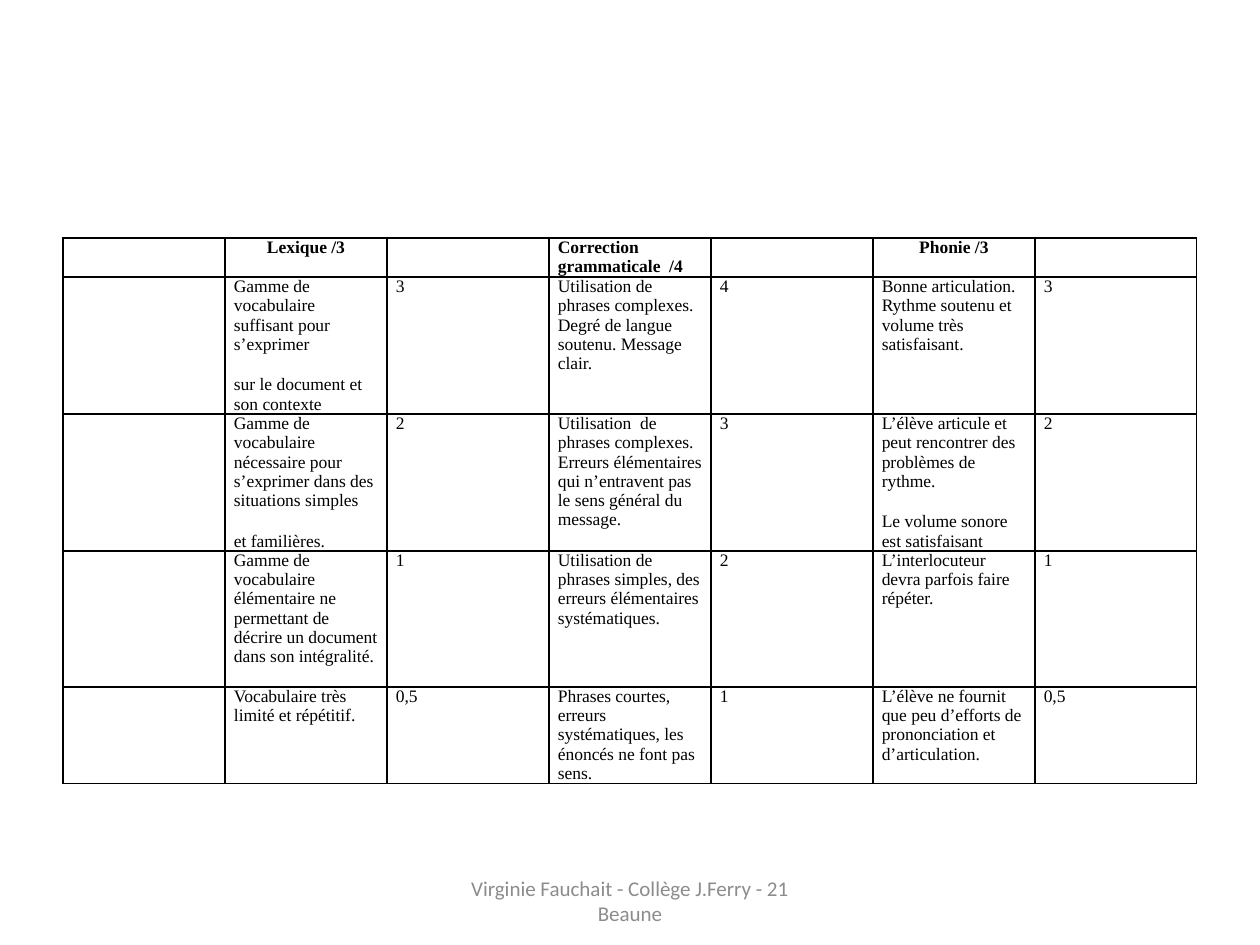
import pptx
import pptx.dml.color
import pptx.enum.text
import pptx.oxml
import pptx.oxml.ns
import pptx.util

BLACK = pptx.dml.color.RGBColor(0x00, 0x00, 0x00)
WHITE = pptx.dml.color.RGBColor(0xFF, 0xFF, 0xFF)
GREY = pptx.dml.color.RGBColor(0x8C, 0x8C, 0x8C)

PX_PER_INCH = 126
CENTER = pptx.enum.text.PP_ALIGN.CENTER
MIDDLE = pptx.enum.text.MSO_ANCHOR.MIDDLE

ROW_HEIGHTS = [39, 137, 136, 136, 96]
CENTERED_HEADINGS = ("Lexique /3", "Phonie /3")
GRADING = [
    ["", "Lexique /3", "", "Correction grammaticale  /4", "", "Phonie /3", ""],
    ["",
     "Gamme de vocabulaire suffisant pour s’exprimer\nsur le document et son contexte", "3",
     "Utilisation de phrases complexes. Degré de langue soutenu. Message clair.", "4",
     "Bonne articulation. Rythme soutenu et volume très satisfaisant.", "3"],
    ["",
     "Gamme de vocabulaire nécessaire pour s’exprimer dans des situations simples\n"
     "et familières.", "2",
     "Utilisation  de phrases complexes. Erreurs élémentaires qui n’entravent pas "
     "le sens général du message.", "3",
     "L’élève articule et peut rencontrer des problèmes de rythme.\n"
     "Le volume sonore est satisfaisant", "2"],
    ["",
     "Gamme de vocabulaire élémentaire ne permettant de décrire un document "
     "dans son intégralité.", "1",
     "Utilisation de phrases simples, des erreurs élémentaires systématiques.", "2",
     "L’interlocuteur devra parfois faire répéter.", "1"],
    ["",
     "Vocabulaire très limité et répétitif.", "0,5",
     "Phrases courtes, erreurs systématiques, les énoncés ne font pas sens.", "1",
     "L’élève ne fournit que peu d’efforts de prononciation et d’articulation.", "0,5"],
]


def px(length):
    return pptx.util.Emu(round(length * 914400 / PX_PER_INCH))


def format_runs(paragraph, name, size, color, bold=False):
    for run in paragraph.runs:
        run.font.name = name
        run.font.size = pptx.util.Pt(size)
        run.font.color.rgb = color
        run.font.bold = bold


def add_borders(cell):
    """Draw a 1 pt line on all four sides; borders must precede the fill."""
    properties = cell._tc.get_or_add_tcPr()
    for index, side in enumerate(("lnL", "lnR", "lnT", "lnB")):
        properties.insert(index, pptx.oxml.parse_xml(
            f'<a:{side} {pptx.oxml.ns.nsdecls("a")} w="{pptx.util.Pt(1)}">'
            f'<a:solidFill><a:srgbClr val="{BLACK}"/></a:solidFill></a:{side}>'))


def fill_cell(cell, text, bold):
    cell.margin_left = cell.margin_right = px(9)
    cell.margin_top = cell.margin_bottom = 0
    cell.fill.solid()
    cell.fill.fore_color.rgb = WHITE
    add_borders(cell)
    if not text:
        return
    cell.text_frame.text = text
    for index, paragraph in enumerate(cell.text_frame.paragraphs):
        paragraph.space_before = pptx.util.Pt(6 if index else 0)
        paragraph.space_after = pptx.util.Pt(6)
        if text in CENTERED_HEADINGS:
            paragraph.alignment = CENTER
        format_runs(paragraph, "Times New Roman", 10, BLACK, bold)


def add_grading_table(slide, left, top, width):
    columns = len(GRADING[0])
    table = slide.shapes.add_table(
        len(GRADING), columns, px(left), px(top), px(width), px(sum(ROW_HEIGHTS))).table
    table.first_row = table.horz_banding = False
    for column in table.columns:
        column.width = px(width / columns)
    for row_index, (height, texts) in enumerate(zip(ROW_HEIGHTS, GRADING)):
        table.rows[row_index].height = px(height)
        for column_index, text in enumerate(texts):
            fill_cell(table.cell(row_index, column_index), text, bold=row_index == 0)


def add_footer(slide, left, top, width, height):
    footer = slide.shapes.add_textbox(px(left), px(top), px(width), px(height))
    text_frame = footer.text_frame
    text_frame.word_wrap = True
    text_frame.vertical_anchor = MIDDLE
    text_frame.text = "Virginie Fauchait - Collège J.Ferry - 21 Beaune"
    paragraph = text_frame.paragraphs[0]
    paragraph.alignment = CENTER
    format_runs(paragraph, "Calibri", 12, GREY)


def main():
    presentation = pptx.Presentation()
    presentation.slide_width = px(1260)
    presentation.slide_height = px(945)
    slide = presentation.slides.add_slide(presentation.slide_layouts[6])
    add_grading_table(slide, 63, 238, 1134)
    add_footer(slide, 430, 876, 400, 50)
    presentation.save("out.pptx")


if __name__ == "__main__":
    main()
